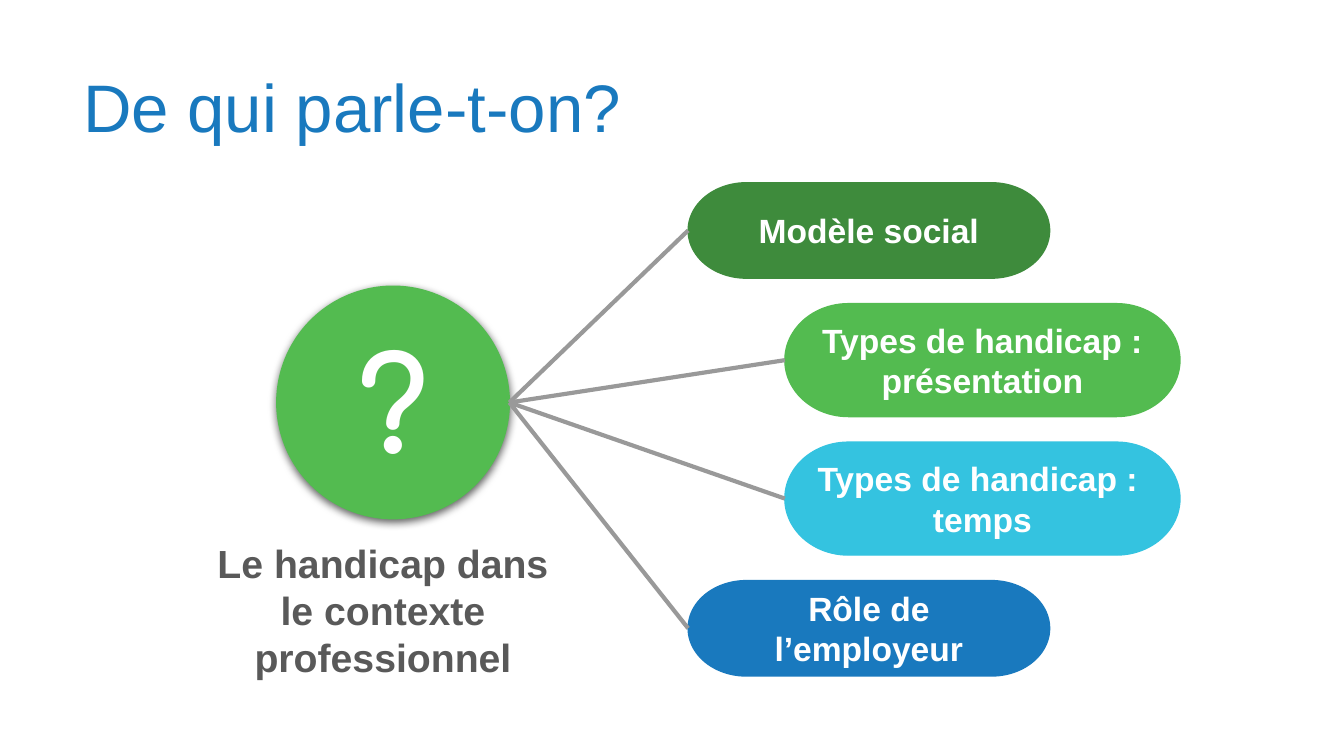
from lxml import etree
from pptx import Presentation
from pptx.dml.color import RGBColor
from pptx.enum.shapes import MSO_CONNECTOR, MSO_SHAPE
from pptx.enum.text import MSO_ANCHOR, PP_ALIGN
from pptx.oxml import parse_xml
from pptx.oxml.ns import qn
from pptx.util import Inches, Pt

CENTER, LEFT = PP_ALIGN.CENTER, PP_ALIGN.LEFT
MIDDLE, TOP = MSO_ANCHOR.MIDDLE, MSO_ANCHOR.TOP
OVAL, PILL = MSO_SHAPE.OVAL, MSO_SHAPE.FLOWCHART_TERMINATOR
STRAIGHT = MSO_CONNECTOR.STRAIGHT
LEFT_SITE = 1

THEME = {
    "blue": "1979BE", "dark_green": "3E8B3C", "green": "53BB50", "cyan": "34C3E0",
    "gray": "999999", "text": "595959", "white": "FFFFFF",
    "font": "Arial", "symbol_font": "Comfortaa",
    "title_size": 36, "symbol_size": 70, "caption_size": 21, "topic_size": 18,
}

SLIDE_WIDTH = Inches(10)
SLIDE_HEIGHT = SLIDE_WIDTH * 9 // 16

TITLE = "De qui parle-t-on?"
SYMBOL = "?"
CAPTION = "Le handicap dans le contexte professionnel"
# Text, colour, left, width, height
TOPICS = [
    ("Modèle social", "dark_green", 5.12, 2.69, 0.71),
    ("Types de handicap : présentation", "green", 5.84, 2.94, 0.84),
    ("Types de handicap : \ntemps", "cyan", 5.84, 2.94, 0.84),
    ("Rôle de l’employeur", "blue", 5.12, 2.69, 0.71),
]
TOPICS_TOP, TOPICS_GAP = 1.36, 0.19
CIRCLE_LEFT, CIRCLE_TOP, CIRCLE_SIZE = 2.06, 2.13, 1.73

SHADOW = (
    '<a:outerShdw xmlns:a="http://schemas.openxmlformats.org/drawingml/2006/main"'
    ' blurRad="57150" dist="19050" dir="5400000" algn="bl" rotWithShape="0">'
    '<a:srgbClr val="000000"><a:alpha val="62000"/></a:srgbClr></a:outerShdw>'
)


def color(name):
    return RGBColor.from_string(THEME[name])


def write_text(shape, text, *, size, color_name, font="font", bold=True,
               align=CENTER, anchor=MIDDLE, margin=0.1, spacing=None):
    frame = shape.text_frame
    frame.word_wrap = True
    frame.vertical_anchor = anchor
    frame.margin_left = frame.margin_right = Inches(0.1)
    frame.margin_top = frame.margin_bottom = Inches(margin)
    paragraph = frame.paragraphs[0]
    paragraph.text = text
    paragraph.alignment = align
    paragraph.line_spacing = spacing
    for run in paragraph.runs:
        run.font.name = THEME[font]
        run.font.size = Pt(THEME[size])
        run.font.bold = bold
        run.font.color.rgb = color(color_name)


def add_text_box(slide, box, text, **text_format):
    write_text(slide.shapes.add_textbox(*map(Inches, box)), text, **text_format)


def add_filled_shape(slide, kind, box, color_name):
    shape = slide.shapes.add_shape(kind, *map(Inches, box))
    shape.shadow.inherit = False
    shape.fill.solid()
    shape.fill.fore_color.rgb = color(color_name)
    shape.line.color.rgb = color(color_name)
    shape.line.width = Pt(0.75)
    return shape


def add_branch(slide, circle, pill):
    """Join the right side of the circle to the left side of a pill."""
    start = circle.left + circle.width, circle.top + circle.height // 2
    branch = slide.shapes.add_connector(STRAIGHT, *start, pill.left, pill.top)
    branch.end_connect(pill, LEFT_SITE)
    branch.line.color.rgb = color("gray")
    branch.line.width = Pt(2.25)
    etree.SubElement(branch.element.spPr, qn("a:effectLst"))


def main():
    presentation = Presentation()
    presentation.slide_width, presentation.slide_height = SLIDE_WIDTH, SLIDE_HEIGHT
    slide = presentation.slides.add_slide(presentation.slide_layouts[6])

    add_text_box(slide, (0.52, 0.28, 8.62, 1.09), TITLE, size="title_size",
                 color_name="blue", bold=False, align=LEFT, margin=0.05, spacing=0.9)

    circle = add_filled_shape(
        slide, OVAL, (CIRCLE_LEFT, CIRCLE_TOP, CIRCLE_SIZE, CIRCLE_SIZE), "green")
    circle.element.spPr.find(qn("a:effectLst")).append(parse_xml(SHADOW))
    write_text(circle, SYMBOL, size="symbol_size", color_name="white", font="symbol_font")
    add_text_box(slide, (1.47, 3.91, 2.76, 1.26), CAPTION, size="caption_size",
                 color_name="text", anchor=TOP)

    pills = []
    top = TOPICS_TOP
    for text, color_name, left, width, height in TOPICS:
        pill = add_filled_shape(slide, PILL, (left, top, width, height), color_name)
        write_text(pill, text, size="topic_size", color_name="white")
        pills.append(pill)
        top += height + TOPICS_GAP

    for pill in pills:
        add_branch(slide, circle, pill)

    presentation.save("out.pptx")


if __name__ == "__main__":
    main()
